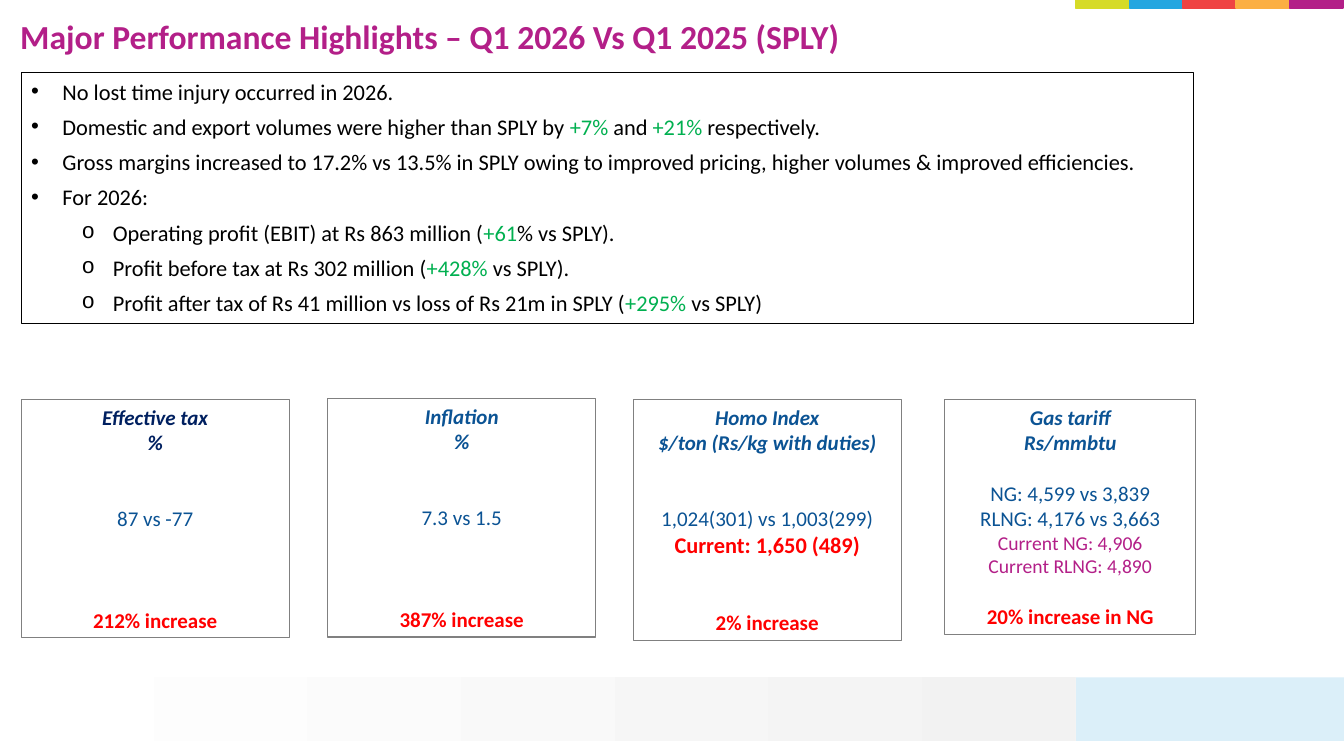
from lxml import etree
from pptx import Presentation
from pptx.dml.color import RGBColor
from pptx.enum.shapes import MSO_SHAPE
from pptx.enum.text import MSO_ANCHOR, MSO_AUTO_SIZE, PP_ALIGN
from pptx.oxml.ns import qn
from pptx.util import Inches, Pt

RECTANGLE = MSO_SHAPE.RECTANGLE
TOP = MSO_ANCHOR.TOP
NO_AUTOFIT = MSO_AUTO_SIZE.NONE
LEFT, CENTER, JUSTIFY = PP_ALIGN.LEFT, PP_ALIGN.CENTER, PP_ALIGN.JUSTIFY

COLORS = {
    "purple": "B31F88", "lime": "D6DB28", "sky": "24A6E0", "coral": "EF4343",
    "amber": "FBAF43", "pale": "DBEFF9", "white": "FFFFFF", "mist": "F2F2F2",
    "black": "000000", "green": "00B050", "gray": "808080", "blue": "0B5394",
    "navy": "002060", "red": "FF0000",
}
FONT = "Calibri"
ROW_HEIGHT = 18.3

HIGHLIGHTS = [
    (0, [("No lost time injury occurred in 2026.", "black")]),
    (0, [("Domestic and export volumes were higher than SPLY by ", "black"),
         ("+7% ", "green"), ("and ", "black"), ("+21%", "green"),
         (" respectively.", "black")]),
    (0, [("Gross margins increased to 17.2% vs 13.5% in SPLY owing to improved "
          "pricing, higher volumes & improved efficiencies.", "black")]),
    (0, [("For 2026:", "black")]),
    (1, [("Operating profit (EBIT) at Rs 863 million (", "black"),
         ("+61", "green"), ("% vs SPLY).", "black")]),
    (1, [("Profit before tax at Rs 302 million (", "black"),
         ("+428%", "green"), (" vs SPLY).", "black")]),
    (1, [("Profit after tax of Rs 41 million vs loss of Rs 21m in SPLY (", "black"),
         ("+295%", "green"), (" vs SPLY)", "black")]),
]
BULLETS = {0: ("•", "Arial", 0.31), 1: ("o", "Courier New", 0.81)}

HEADING = {"color": "blue", "bold": True, "italic": True}
NAVY_HEADING = {**HEADING, "color": "navy"}
FIGURE = {"color": "blue"}
CURRENT = {"color": "purple", "size": 14}
CHANGE = {"color": "red", "bold": True}

INDICATORS = [
    ((0.21, 3.96, 2.66, 2.37), [
        ("Effective tax", 0, NAVY_HEADING), ("%", 0, NAVY_HEADING),
        ("87 vs -77", 2, FIGURE), ("212% increase", 3, CHANGE)]),
    ((3.25, 3.95, 2.66, 2.37), [
        ("Inflation", 0, HEADING), ("%", 0, HEADING),
        ("7.3 vs 1.5", 2, FIGURE), ("387% increase", 3, CHANGE)]),
    ((6.28, 3.96, 2.66, 2.39), [
        ("Homo Index", 0, HEADING), ("$/ton (Rs/kg with duties)", 0, HEADING),
        ("1,024(301) vs 1,003(299)", 2, FIGURE),
        ("Current: 1,650 (489)", 0, {**CHANGE, "size": 16}),
        ("2% increase", 2, CHANGE)]),
    ((9.37, 3.96, 2.49, 2.34), [
        ("Gas tariff", 0, HEADING), ("Rs/mmbtu", 0, HEADING),
        ("NG: 4,599 vs 3,839", 1, FIGURE), ("RLNG: 4,176 vs 3,663", 0, FIGURE),
        ("Current NG: 4,906", 0, CURRENT), ("Current RLNG: 4,890", 0, CURRENT),
        ("20% increase in NG", 1, CHANGE)]),
]


def rgb(name):
    return RGBColor.from_string(COLORS[name])


def write(paragraph, text, size=15, color="black", bold=False, italic=False):
    run = paragraph.add_run()
    run.text = text
    run.font.name = FONT
    run.font.size = Pt(size)
    run.font.bold = bold
    run.font.italic = italic
    run.font.color.rgb = rgb(color)


class HighlightsSlide:
    def __init__(self, deck):
        self.slide = deck.slides.add_slide(deck.slide_layouts[1])

    def place(self, holder, box):
        holder.left, holder.top, holder.width, holder.height = map(Inches, box)
        frame = holder.text_frame
        frame.word_wrap = True
        frame.auto_size = NO_AUTOFIT
        frame.vertical_anchor = TOP
        return frame

    def rectangle(self, box, fill=None, line=None, weight=0.75):
        shape = self.slide.shapes.add_shape(RECTANGLE, *map(Inches, box))
        shape.shadow.inherit = False
        if fill:
            shape.fill.solid()
            shape.fill.fore_color.rgb = rgb(fill)
        else:
            shape.fill.background()
        if line:
            shape.line.color.rgb = rgb(line)
            shape.line.width = Pt(weight)
        else:
            shape.line.fill.background()
        return shape

    def gradient_band(self, box, start, end):
        band = self.rectangle(box)
        band.fill.gradient()
        band.fill.gradient_angle = 0
        for stop, color in zip(band.fill.gradient_stops, (start, end)):
            stop.color.rgb = rgb(color)

    def title(self, text, box):
        heading = self.place(self.slide.shapes.title, box).paragraphs[0]
        heading.alignment = LEFT
        heading.line_spacing = 0.9
        write(heading, text, size=24, color="purple", bold=True)

    def bullet_list(self, items, box):
        body = self.slide.placeholders[1]
        frame = self.place(body, box)
        body.fill.solid()
        body.fill.fore_color.rgb = rgb("white")
        body.line.color.rgb = rgb("black")
        body.line.width = Pt(0.75)
        for index, (level, phrases) in enumerate(items):
            item = frame.add_paragraph() if index else frame.paragraphs[0]
            self.bullet(item, *BULLETS[level])
            item.level = level
            item.alignment = JUSTIFY
            item.space_before = Pt(0)
            item.space_after = Pt(6)
            for text, color in phrases:
                write(item, text, size=16, color=color)

    def bullet(self, paragraph, mark, typeface, margin):
        properties = paragraph._p.get_or_add_pPr()
        properties.set("marL", str(Inches(margin)))
        properties.set("indent", str(Inches(-0.31)))
        etree.SubElement(properties, qn("a:buFont"), typeface=typeface)
        etree.SubElement(properties, qn("a:buChar"), char=mark)

    def indicator(self, box, rows):
        frame = self.place(self.rectangle(box, line="gray"), box)
        for index, (text, gap, style) in enumerate(rows):
            row = frame.add_paragraph() if index else frame.paragraphs[0]
            row.alignment = CENTER
            if gap:
                row.space_before = Pt(gap * ROW_HEIGHT)
            write(row, text, **style)


def main():
    deck = Presentation()
    deck.slide_width, deck.slide_height = Inches(13.33), Inches(7.5)
    page = HighlightsSlide(deck)
    for index, color in enumerate(("lime", "sky", "coral", "amber", "purple")):
        page.rectangle((10.67 + 0.53 * index, 0, 0.53, 0.08), color, color, 1)
    page.rectangle((10.66, 6.72, 2.67, 0.63), "pale")
    page.gradient_band((0, 6.72, 10.67, 0.63), "white", "mist")
    page.title("Major Performance Highlights – Q1 2026 Vs Q1 2025 (SPLY)",
               (0.1, 0.15, 11.13, 0.33))
    page.bullet_list(HIGHLIGHTS, (0.21, 0.72, 11.63, 2.49))
    for box, rows in INDICATORS:
        page.indicator(box, rows)
    deck.save("out.pptx")


if __name__ == "__main__":
    main()
